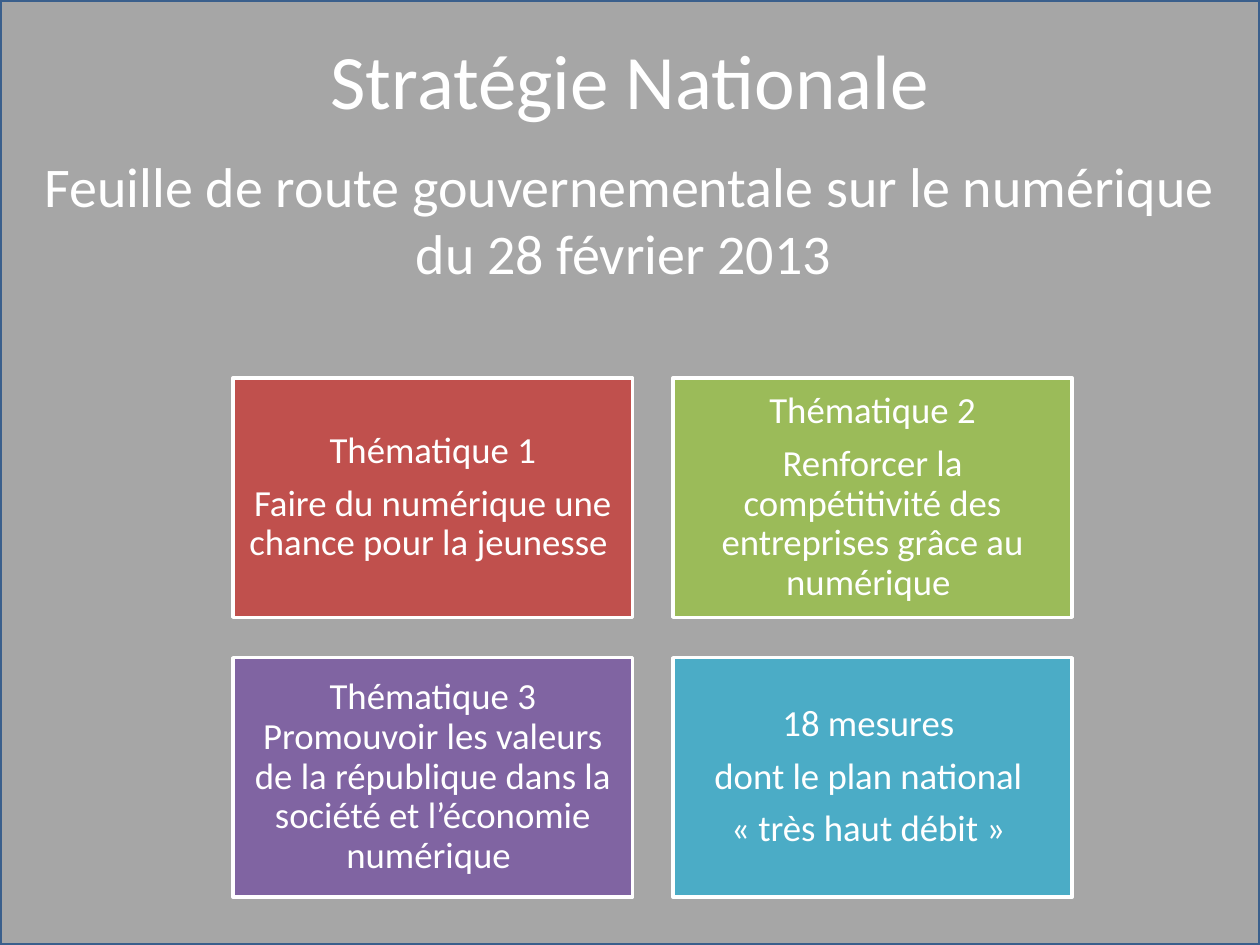
from pptx import Presentation
from pptx.dml.color import RGBColor
from pptx.enum.shapes import MSO_SHAPE
from pptx.enum.text import MSO_ANCHOR, PP_ALIGN
from pptx.util import Inches, Pt

COLORS = {
    "white": "FFFFFF", "gray": "A6A6A6", "border": "3A5F8C",
    "red": "C0504D", "green": "9BBB59", "purple": "8064A2", "blue": "4BACC6",
}


def add_box(left, top, width, height, fill, line):
    s = slide.shapes.add_shape(MSO_SHAPE.RECTANGLE, Inches(left), Inches(top),
                               Inches(width), Inches(height))
    s.shadow.inherit = False
    s.fill.solid()
    s.fill.fore_color.rgb = RGBColor.from_string(COLORS[fill])
    s.line.color.rgb = RGBColor.from_string(COLORS[line])
    s.line.width = Pt(2)
    return s


def write_text(tf, lines, size, anchor, spacing=1.0, before=0, after=0):
    tf.word_wrap = True
    tf.vertical_anchor = anchor
    for i, line in enumerate(lines):
        p = tf.add_paragraph() if i else tf.paragraphs[0]
        p.alignment = PP_ALIGN.CENTER
        p.line_spacing = spacing
        p.space_before = Pt(before)
        p.space_after = Pt(after)
        r = p.add_run()
        r.text = line
        r.font.name = "Calibri"
        r.font.size = Pt(size)
        r.font.color.rgb = RGBColor.from_string(COLORS["white"])


prs = Presentation()
prs.slide_width = Inches(10)
prs.slide_height = Inches(7.5)
slide = prs.slides.add_slide(prs.slide_layouts[6])

# Gray backdrop
add_box(0, 0, 10, 7.5, "gray", "border")

# Title and subtitle
sp = slide.shapes.add_textbox(Inches(0.5), Inches(0), Inches(9), Inches(1.25))
write_text(sp.text_frame, ["Stratégie Nationale"], 44, MSO_ANCHOR.MIDDLE)

sp = slide.shapes.add_textbox(Inches(0), Inches(1.15), Inches(10), Inches(1.5))
write_text(sp.text_frame,
           ["Feuille de route gouvernementale sur le numérique du 28 février 2013 "],
           32, MSO_ANCHOR.TOP, before=6.4)

# Theme cards in a two by two grid
CARD_W, CARD_H, GAP = 3.17, 1.9, 0.32
cards = [
    ("red", ["Thématique 1", "Faire du numérique une chance pour la jeunesse "]),
    ("green", ["Thématique 2",
               "Renforcer la compétitivité des entreprises grâce au numérique "]),
    ("purple", ["Thématique 3 Promouvoir les valeurs de la république dans la "
                "société et l’économie numérique "]),
    ("blue", ["18 mesures ", "dont le plan national ", "« très haut débit » "]),
]
for i, (color, lines) in enumerate(cards):
    row, col = divmod(i, 2)
    s = add_box(1.85 + col * (CARD_W + GAP), 3 + row * (CARD_H + GAP),
                CARD_W, CARD_H, color, "white")
    tf = s.text_frame
    tf.margin_left = tf.margin_right = Inches(0.09)
    tf.margin_top = tf.margin_bottom = Inches(0.09)
    write_text(tf, lines, 21, MSO_ANCHOR.MIDDLE, spacing=0.9, after=7.35)

prs.save("out.pptx")
